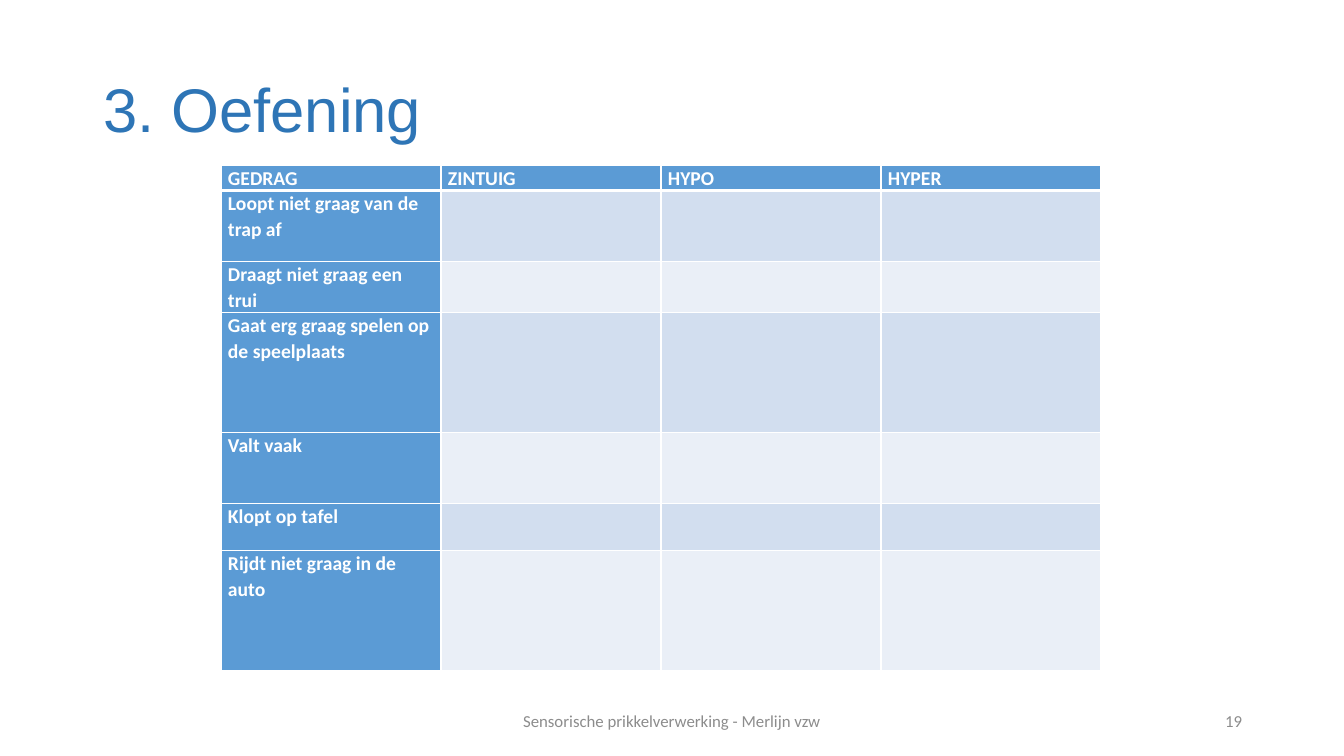
from lxml import etree
from pptx import Presentation
from pptx.dml.color import RGBColor
from pptx.enum.text import MSO_ANCHOR, MSO_AUTO_SIZE, PP_ALIGN
from pptx.oxml.ns import qn
from pptx.util import Emu, Pt

TITLE = "3. Oefening"
HEADINGS = ["GEDRAG", "ZINTUIG", "HYPO", "HYPER"]
# Behaviour and row height in px
BEHAVIOURS = [
    ("Loopt niet graag van de trap af", 71),
    ("Draagt niet graag een trui", 51),
    ("Gaat erg graag spelen op de speelplaats", 120),
    ("Valt vaak", 71),
    ("Klopt op tafel", 47),
    ("Rijdt niet graag in de auto", 120),
]
# Text, left, width and alignment
FOOTERS = [
    ("Sensorische prikkelverwerking - Merlijn vzw", 445, 454, PP_ALIGN.CENTER),
    ("19", 950, 302, PP_ALIGN.RIGHT),
]
HEADER_HEIGHT = 25
COLUMN_WIDTH = 220

WHITE = RGBColor(0xFF, 0xFF, 0xFF)
TITLE_BLUE = RGBColor(0x2E, 0x75, 0xB6)
HEADER_BLUE = RGBColor(0x5B, 0x9B, 0xD5)
BANDS = [RGBColor(0xD2, 0xDE, 0xEF), RGBColor(0xEA, 0xEF, 0xF7)]
GREY = RGBColor(0x8C, 0x8C, 0x8C)


def px(length):
    return Emu(round(length * 914400 / 100.8))


def place(shape, left, top, width, height):
    shape.left, shape.top = px(left), px(top)
    shape.width, shape.height = px(width), px(height)


def style(paragraph, font_name, size, color, bold=False):
    for run in paragraph.runs:
        font = run.font
        font.name, font.size, font.bold = font_name, Pt(size), bold
        font.color.rgb = color


def add_borders(cell, top, bottom):
    """Draw white borders; top and bottom are widths in points."""
    properties = cell._tc.get_or_add_tcPr()
    for side, width in (("L", 1), ("R", 1), ("T", top), ("B", bottom)):
        line = etree.SubElement(properties, qn(f"a:ln{side}"), w=str(Pt(width)))
        fill = etree.SubElement(line, qn("a:solidFill"))
        etree.SubElement(fill, qn("a:srgbClr"), val=str(WHITE))


def fill_cell(cell, text, color, top, bottom):
    cell.margin_left = cell.margin_right = px(7)
    cell.margin_top = cell.margin_bottom = 0
    add_borders(cell, top, bottom)
    cell.fill.solid()
    cell.fill.fore_color.rgb = color
    if text:
        cell.text_frame.text = text
        paragraph = cell.text_frame.paragraphs[0]
        paragraph.line_spacing = 1.07
        style(paragraph, "Calibri", 14, WHITE, bold=True)


def add_title(slide):
    title = slide.shapes.title
    place(title, 93, 40, 1159, 146)
    frame = title.text_frame
    frame.text = TITLE
    frame.auto_size = MSO_AUTO_SIZE.NONE
    frame.vertical_anchor = MSO_ANCHOR.MIDDLE
    paragraph = frame.paragraphs[0]
    paragraph.alignment = PP_ALIGN.LEFT
    paragraph.line_spacing = 0.9
    style(paragraph, "Arial", 44, TITLE_BLUE)


def add_exercise_table(slide):
    heights = [HEADER_HEIGHT] + [height for _, height in BEHAVIOURS]
    rows = [HEADINGS] + [[text, "", "", ""] for text, _ in BEHAVIOURS]
    table = slide.shapes.add_table(
        len(rows), len(HEADINGS), px(221), px(165),
        px(COLUMN_WIDTH * len(HEADINGS)), px(sum(heights))).table
    table.first_col = True
    for column in table.columns:
        column.width = px(COLUMN_WIDTH)
    for r, (texts, height) in enumerate(zip(rows, heights)):
        table.rows[r].height = px(height)
        for c, text in enumerate(texts):
            color = HEADER_BLUE if r == 0 or c == 0 else BANDS[(r - 1) % 2]
            fill_cell(table.cell(r, c), text, color,
                      top=3 if r == 1 else 1, bottom=3 if r == 0 else 1)


def add_footer(slide, text, left, width, alignment):
    box = slide.shapes.add_textbox(px(left), px(701), px(width), px(40))
    frame = box.text_frame
    frame.word_wrap = True
    frame.vertical_anchor = MSO_ANCHOR.MIDDLE
    frame.text = text
    paragraph = frame.paragraphs[0]
    paragraph.alignment = alignment
    style(paragraph, "Calibri", 12, GREY)


def main():
    presentation = Presentation()
    presentation.slide_width, presentation.slide_height = px(1344), px(756)
    slide = presentation.slides.add_slide(presentation.slide_layouts[5])
    add_title(slide)
    add_exercise_table(slide)
    for footer in FOOTERS:
        add_footer(slide, *footer)
    presentation.save("out.pptx")


if __name__ == "__main__":
    main()
